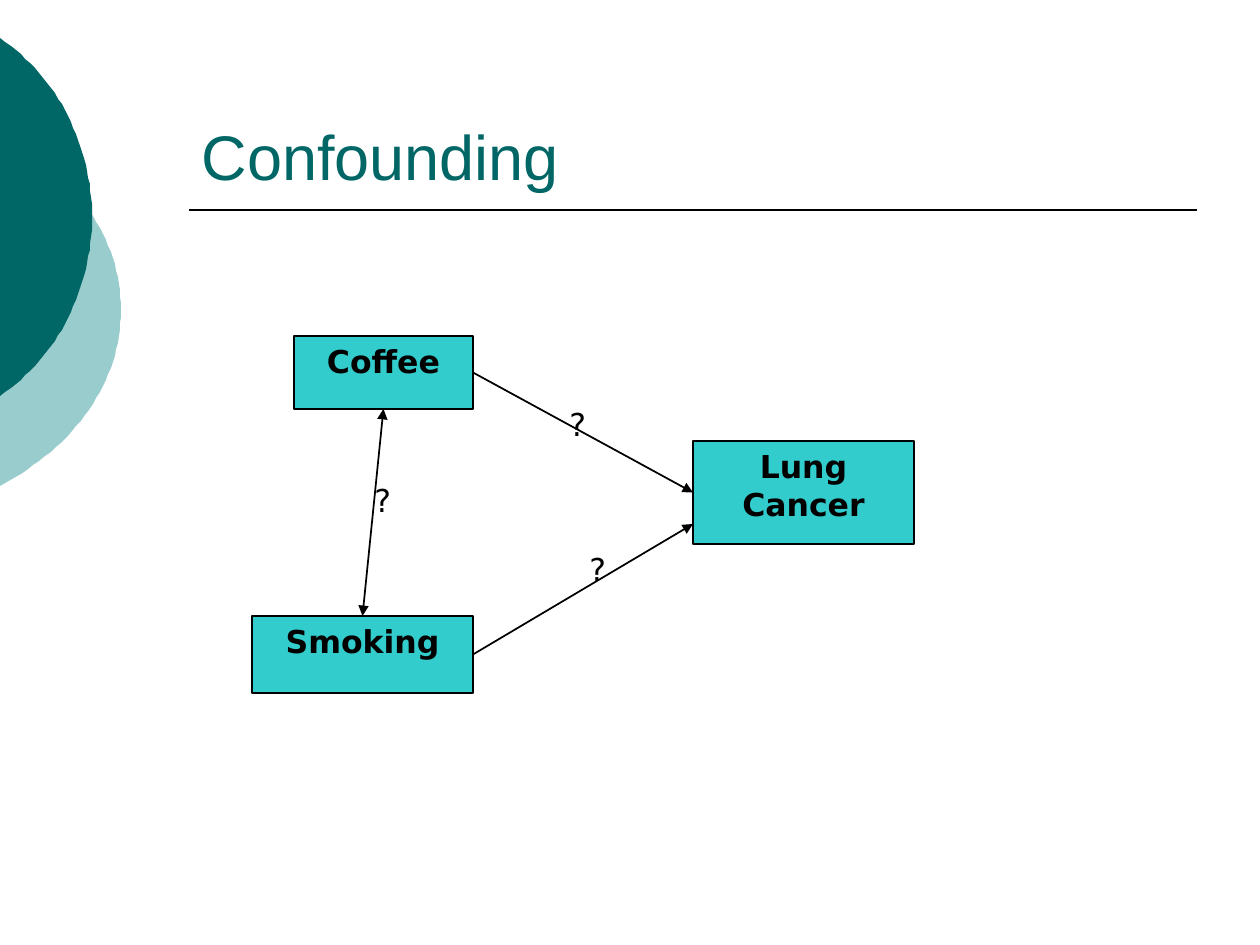
from lxml.etree import SubElement
from pptx import Presentation
from pptx.dml.color import RGBColor
from pptx.enum.shapes import MSO_CONNECTOR, MSO_SHAPE
from pptx.enum.text import MSO_ANCHOR, MSO_AUTO_SIZE, PP_ALIGN
from pptx.oxml.ns import qn
from pptx.util import Pt

SCALE = 914400 / 126
BLACK = RGBColor(0x00, 0x00, 0x00)
TEAL = RGBColor(0x00, 0x66, 0x66)
PALE = RGBColor(0x99, 0xCC, 0xCC)
AQUA = RGBColor(0x33, 0xCC, 0xCC)


def px(*nums):
    return [round(n * SCALE) for n in nums]


class Deck:
    """Holds the style and the current slide, and adds each kind of element."""

    head = "Arial"
    body = "DejaVu Sans"
    steps = 32

    def __init__(self, wide, high):
        self.prs = Presentation()
        self.prs.slide_width, self.prs.slide_height = px(wide, high)
        self.slide = self.prs.slides.add_slide(self.prs.slide_layouts[5])
        self.shapes = self.slide.shapes

    def run(self, par, text, font, size, color, bold=False):
        run = par.add_run()
        run.text = text
        run.font.name = font
        run.font.size = Pt(size)
        run.font.bold = bold
        run.font.color.rgb = color

    def title(self, text, *area):
        box = self.shapes.title
        box.left, box.top, box.width, box.height = px(*area)
        frame = box.text_frame
        frame.vertical_anchor = MSO_ANCHOR.BOTTOM
        frame.auto_size = MSO_AUTO_SIZE.NONE
        par = frame.paragraphs[0]
        par.alignment = PP_ALIGN.LEFT
        self.run(par, text, self.head, 36, TEAL)

    def disc(self, color, mid, half, wide, bend, rise):
        """Draws the part of a disc that bulges in from the left edge."""
        arc = []
        for i in range(self.steps + 1):
            t = i / self.steps
            u = 1 - t
            x = 3 * u * u * t * bend + (3 * u * t * t + t ** 3) * wide
            y = u ** 3 * half + 3 * u * u * t * rise[0] + 3 * u * t * t * rise[1]
            arc.append((x, y))
        dots = [(x, mid - y) for x, y in arc]
        dots += [(x, mid + y) for x, y in reversed(arc[:-1])]
        form = self.shapes.build_freeform(*dots[0], scale=SCALE)
        form.add_line_segments(dots[1:], close=True)
        shape = form.convert_to_shape()
        shape.shadow.inherit = False
        shape.fill.solid()
        shape.fill.fore_color.rgb = color
        shape.line.fill.background()

    def box(self, text, *area):
        shape = self.shapes.add_shape(MSO_SHAPE.RECTANGLE, *px(*area))
        shape.shadow.inherit = False
        shape.fill.solid()
        shape.fill.fore_color.rgb = AQUA
        shape.line.color.rgb = BLACK
        shape.line.width = Pt(1)
        frame = shape.text_frame
        frame.word_wrap = True
        frame.vertical_anchor = MSO_ANCHOR.TOP
        par = frame.paragraphs[0]
        par.alignment = PP_ALIGN.CENTER
        self.run(par, text, self.body, 18, BLACK, True)
        return shape

    def line(self, start, end, ends=(), begin=None, stop=None):
        link = self.shapes.add_connector(MSO_CONNECTOR.STRAIGHT, *px(*start, *end))
        link.line.color.rgb = BLACK
        link.line.width = Pt(1)
        if begin:
            link.begin_connect(*begin)
        if stop:
            link.end_connect(*stop)
        props = link.line._get_or_add_ln()
        for end in ends:
            SubElement(props, qn(f"a:{end}End"), type="triangle")
        SubElement(link._element.spPr, qn("a:effectLst"))

    def label(self, text, *area):
        frame = self.shapes.add_textbox(*px(*area)).text_frame
        frame.word_wrap = False
        frame.auto_size = MSO_AUTO_SIZE.SHAPE_TO_FIT_TEXT
        self.run(frame.paragraphs[0], text, self.body, 18, BLACK)

    def save(self):
        self.prs.save("out.pptx")


def main():
    deck = Deck(1260, 945)
    deck.disc(PALE, 310, 176, 121, 76, (136, 71))
    deck.disc(TEAL, 217, 179, 92, 58, (139, 71))
    deck.line((189, 210), (1197, 210))
    deck.title("Confounding", 189, 42, 1008, 157)
    lung = deck.box("Lung Cancer", 693, 441, 221, 103)
    smoke = deck.box("Smoking", 252, 616, 221, 77)
    coffee = deck.box("Coffee", 294, 336, 179, 73)
    deck.line((473, 373), (693, 493), ["tail"], (coffee, 3), (lung, 1))
    deck.line((473, 655), (693, 524), ["tail"], (smoke, 3))
    deck.line((383, 409), (362, 616), ["head", "tail"], (coffee, 2), (smoke, 0))
    for left, top in ((557, 399), (362, 475), (577, 544)):
        deck.label("?", left, top, 43, 50)
    deck.save()


if __name__ == "__main__":
    main()
